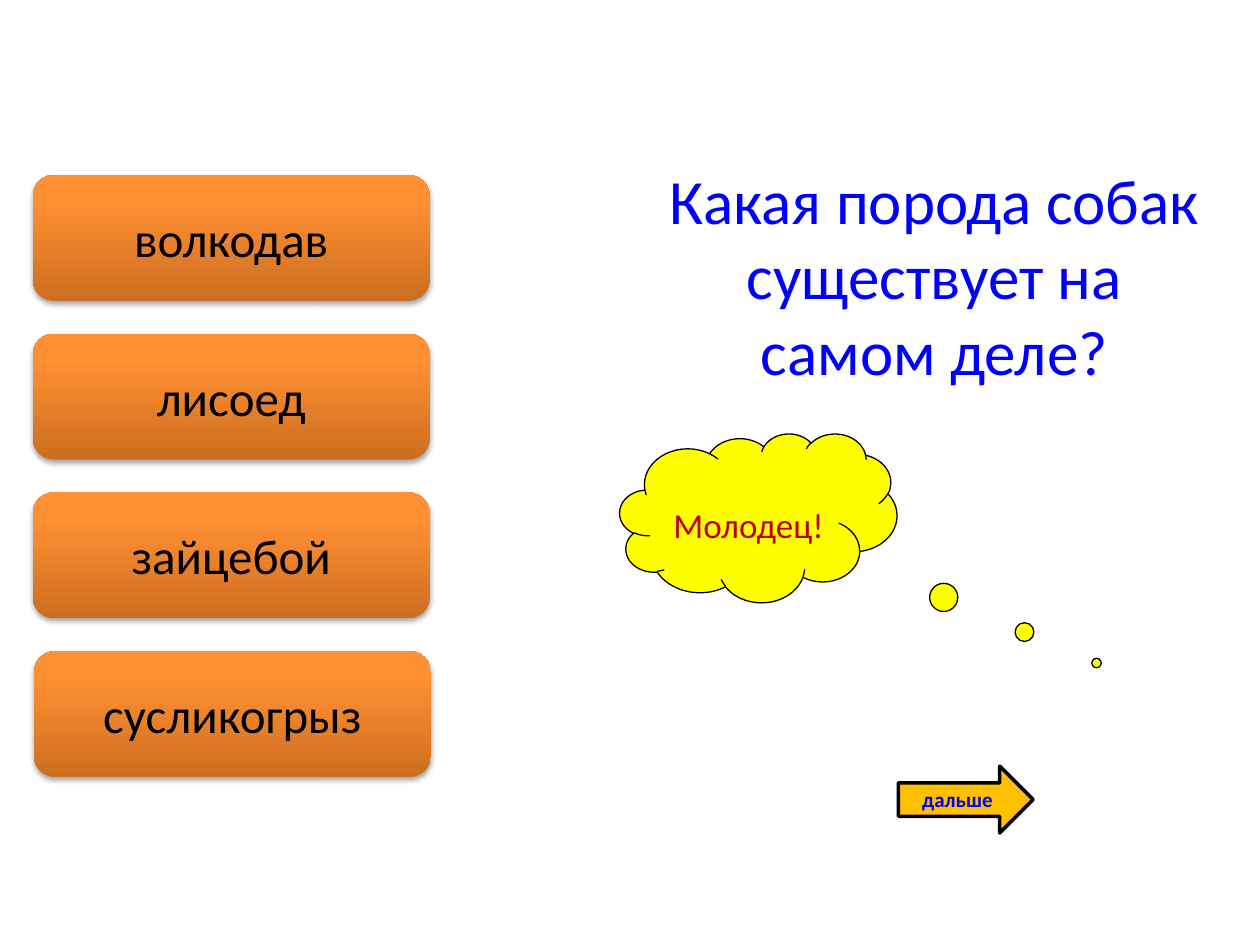
"""Build a quiz slide about dog breeds with four answer buttons."""
from pptx import Presentation
from pptx.dml.color import RGBColor
from pptx.enum.shapes import MSO_SHAPE
from pptx.enum.text import MSO_ANCHOR, PP_ALIGN
from pptx.oxml import parse_xml
from pptx.oxml.ns import nsdecls, qn
from pptx.util import Pt

QUESTION = "Какая порода собак существует на самом деле?"
ANSWERS = [("волкодав", 18.7), ("лисоед", 18.7), ("зайцебой", 18.7), ("сусликогрыз", 19.4)]
PRAISE = "Молодец!"
NEXT = "дальше"

FONT = "Calibri"
BLACK = RGBColor(0, 0, 0)
BLUE = RGBColor(0, 0, 255)
RED = RGBColor(0xC0, 0, 0)
YELLOW = RGBColor(255, 255, 0)
AMBER = RGBColor(255, 0xC0, 0)
ORANGE_STOPS = [(0, RGBColor(0xCC, 0x6E, 0x20)), (80, RGBColor(0xFF, 0x90, 0x34)),
                (100, RGBColor(0xFF, 0x91, 0x36))]

BUTTON_TOP, BUTTON_PITCH = 100, 90.7
BUTTON_W, BUTTON_H = 226.8, 72


def write(s, text, size, color, anchor=MSO_ANCHOR.MIDDLE, bold=False):
    tf = s.text_frame
    tf.text = text
    tf.word_wrap = True
    tf.vertical_anchor = anchor
    p = tf.paragraphs[0]
    p.alignment = PP_ALIGN.CENTER
    font = p.runs[0].font
    font.name, font.size, font.bold = FONT, Pt(size), bold
    font.color.rgb = color


def add_shape(slide, kind, left, top, width, height):
    s = slide.shapes.add_shape(kind, Pt(left), Pt(top), Pt(width), Pt(height))
    s.shadow.inherit = False
    return s


def paint(s, fill, line_width):
    s.fill.solid()
    s.fill.fore_color.rgb = fill
    s.line.color.rgb = BLACK
    s.line.width = Pt(line_width)


def style_button(s):
    s.fill.gradient()
    s.fill.gradient_angle = 90
    s.line.fill.background()
    spPr = s._element.spPr
    stops = spPr.find(".//" + qn("a:gsLst"))
    for stop in list(stops):
        stops.remove(stop)
    for position, color in ORANGE_STOPS:
        stops.append(parse_xml(
            f'<a:gs {nsdecls("a")} pos="{position * 1000}"><a:srgbClr val="{color}"/></a:gs>'))
    spPr.find(qn("a:effectLst")).append(parse_xml(
        f'<a:outerShdw {nsdecls("a")} blurRad="{Pt(3.1)}" dist="{Pt(1.8)}" dir="5400000" '
        f'rotWithShape="0"><a:srgbClr val="{BLACK}"><a:alpha val="35000"/></a:srgbClr></a:outerShdw>'))


def main():
    prs = Presentation()
    prs.slide_width, prs.slide_height = Pt(720), Pt(540)
    slide = prs.slides.add_slide(prs.slide_layouts[5])

    title = slide.shapes.title
    title.left, title.top, title.width, title.height = Pt(372.2), Pt(88.6), Pt(323.3), Pt(138.2)
    write(title, QUESTION, 36, BLUE, MSO_ANCHOR.TOP)

    cloud = add_shape(slide, MSO_SHAPE.CLOUD_CALLOUT, 354.2, 247.7, 158.4, 96.5)
    cloud.adjustments[0], cloud.adjustments[1] = 1.22, 0.86
    paint(cloud, YELLOW, 0.75)
    write(cloud, PRAISE, 20, RED, MSO_ANCHOR.TOP)
    cloud.text_frame.margin_top = Pt(25.5)

    arrow = add_shape(slide, MSO_SHAPE.RIGHT_ARROW, 513.4, 437.8, 77, 38.2)
    paint(arrow, AMBER, 2)
    write(arrow, NEXT, 12, BLUE, bold=True)

    for i, (answer, left) in enumerate(ANSWERS):
        button = add_shape(slide, MSO_SHAPE.ROUNDED_RECTANGLE, left,
                           BUTTON_TOP + i * BUTTON_PITCH, BUTTON_W, BUTTON_H)
        style_button(button)
        write(button, answer, 28, BLACK)

    prs.save("out.pptx")


if __name__ == "__main__":
    main()
